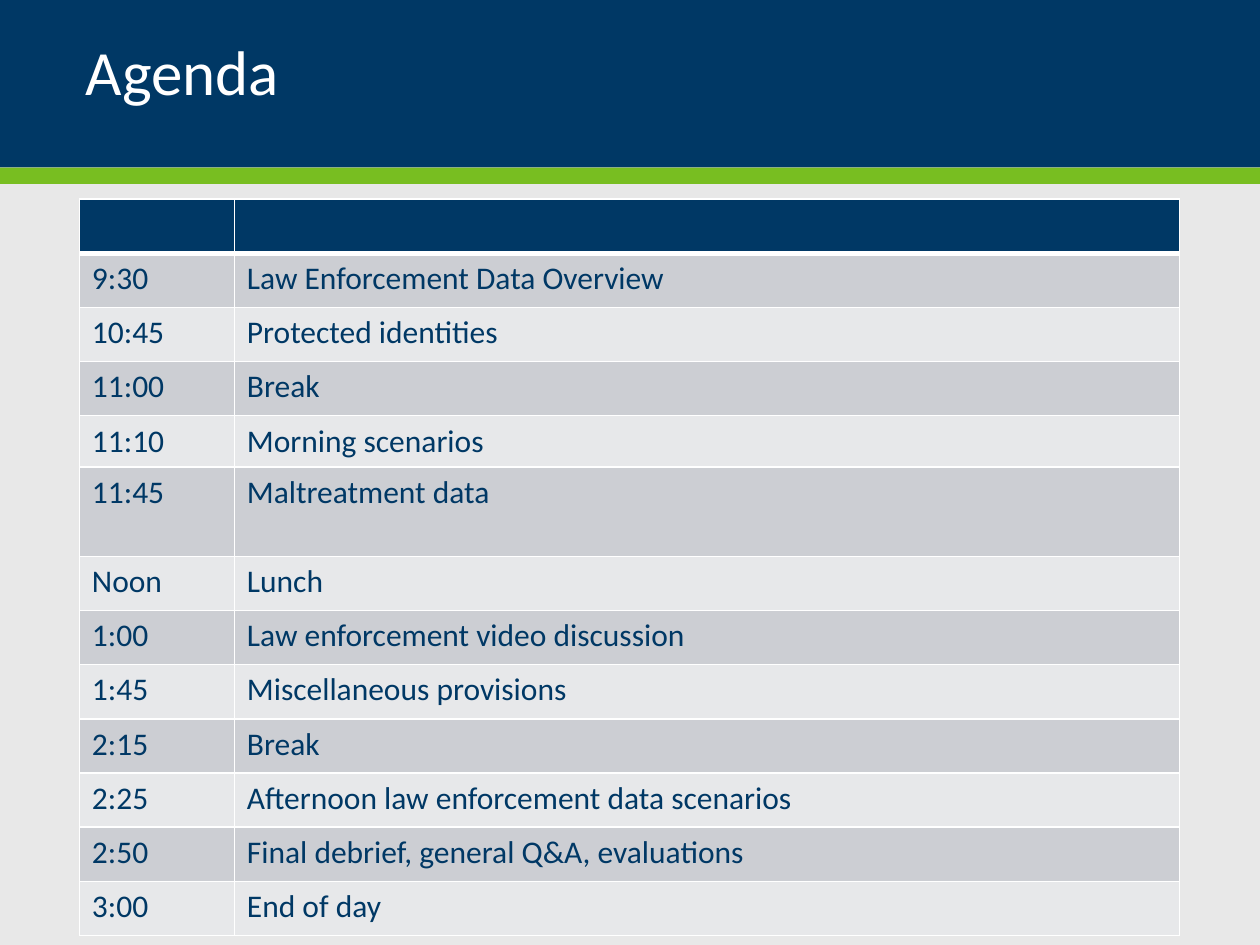
"""Build the agenda slide: a title band above a two-column timetable."""
from lxml.etree import SubElement
from pptx import Presentation
from pptx.dml.color import RGBColor
from pptx.enum.shapes import MSO_SHAPE
from pptx.enum.text import MSO_ANCHOR, PP_ALIGN
from pptx.oxml.ns import qn
from pptx.util import Inches, Pt

NAVY = RGBColor(0x00, 0x38, 0x65)
GREEN = RGBColor(0x78, 0xBE, 0x21)
WHITE = RGBColor(0xFF, 0xFF, 0xFF)
BACKGROUND = RGBColor(0xE8, 0xE8, 0xE8)
ROW_FILLS = [RGBColor(0xE7, 0xE8, 0xEA), RGBColor(0xCC, 0xCE, 0xD3)]
FONT = "Calibri"
ROW_HEIGHT = 0.43
SPECIAL_HEIGHTS = {4: 0.4, 5: 0.71}
COLUMN_WIDTHS = [1.23, 7.5]
AGENDA = [
    ("", ""),
    ("9:30", "Law Enforcement Data Overview"),
    ("10:45", "Protected identities"),
    ("11:00", "Break"),
    ("11:10", "Morning scenarios"),
    ("11:45", "Maltreatment data"),
    ("Noon", "Lunch"),
    ("1:00", "Law enforcement video discussion"),
    ("1:45", "Miscellaneous provisions"),
    ("2:15", "Break"),
    ("2:25", "Afternoon law enforcement data scenarios"),
    ("2:50", "Final debrief, general Q&A, evaluations"),
    ("3:00", "End of day"),
]


def style_font(font, size, color):
    font.name = FONT
    font.size = Pt(size)
    font.color.rgb = color


def add_borders(cell, widths):
    properties = cell._tc.get_or_add_tcPr()
    for side, width in widths.items():
        line = SubElement(properties, qn(f"a:ln{side}"), w=str(Pt(width)))
        fill = SubElement(line, qn("a:solidFill"))
        SubElement(fill, qn("a:srgbClr"), val=str(WHITE))


presentation = Presentation()
presentation.slide_width = Inches(10)
presentation.slide_height = Inches(7.5)
slide = presentation.slides.add_slide(presentation.slide_layouts[5])
slide.background.fill.solid()
slide.background.fill.fore_color.rgb = BACKGROUND

for top, height, color in [(0, 1.33, NAVY), (1.33, 0.13, GREEN)]:
    band = slide.shapes.add_shape(
        MSO_SHAPE.RECTANGLE, 0, Inches(top), presentation.slide_width, Inches(height))
    band.shadow.inherit = False
    band.fill.solid()
    band.fill.fore_color.rgb = color
    band.line.fill.background()

title = slide.shapes.title
title.element.getparent().append(title.element)
title.left, title.top = Inches(0.58), Inches(0.14)
title.width, title.height = Inches(8.75), Inches(0.92)
title.text_frame.text = "Agenda"
title.text_frame.vertical_anchor = MSO_ANCHOR.MIDDLE
paragraph = title.text_frame.paragraphs[0]
paragraph.alignment = PP_ALIGN.LEFT
paragraph.line_spacing = 0.9
style_font(paragraph.runs[0].font, 36, WHITE)

heights = [SPECIAL_HEIGHTS.get(index, ROW_HEIGHT) for index in range(len(AGENDA))]
table = slide.shapes.add_table(
    len(AGENDA), len(COLUMN_WIDTHS), Inches(0.63), Inches(1.58),
    Inches(sum(COLUMN_WIDTHS)), Inches(sum(heights))).table
for column, width in zip(table.columns, COLUMN_WIDTHS):
    column.width = Inches(width)

for index, (entry, height) in enumerate(zip(AGENDA, heights)):
    table.rows[index].height = Inches(height)
    for cell, text in zip(table.rows[index].cells, entry):
        add_borders(cell, {"L": 1, "R": 1, "T": 3 if index == 1 else 1,
                           "B": 3 if index == 0 else 1})
        cell.fill.solid()
        cell.fill.fore_color.rgb = ROW_FILLS[index % 2] if index else NAVY
        if text:
            cell.text_frame.text = text
            style_font(cell.text_frame.paragraphs[0].runs[0].font, 18, NAVY)

presentation.save("out.pptx")
